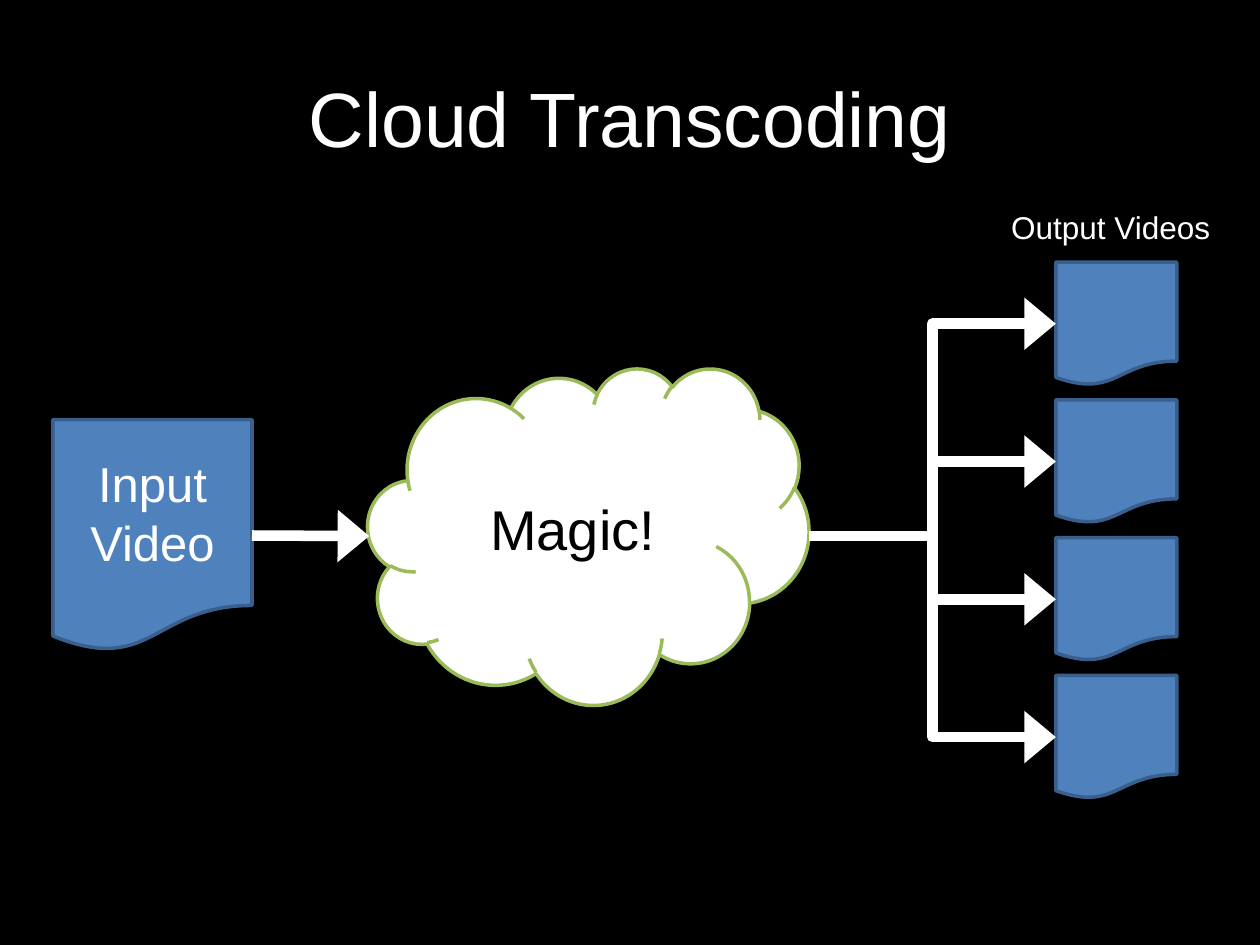
from lxml import etree
from pptx import Presentation
from pptx.dml.color import RGBColor
from pptx.enum.shapes import MSO_CONNECTOR as Link, MSO_SHAPE as Shape
from pptx.enum.text import MSO_ANCHOR as Anchor, PP_ALIGN as Align
from pptx.oxml.ns import qn
from pptx.util import Inches, Pt

BLACK = RGBColor(0x00, 0x00, 0x00)
WHITE = RGBColor(0xFF, 0xFF, 0xFF)
BLUE = RGBColor(0x4F, 0x81, 0xBD)
NAVY = RGBColor(0x3A, 0x5F, 0x8C)
GREEN = RGBColor(0x9B, 0xBB, 0x59)
FONT = "Arial"
OUTPUT_COUNT = 4
OUTPUT_HEIGHT = Inches(0.98)


def write_text(shape, lines, size, color, anchor=Anchor.MIDDLE):
    frame = shape.text_frame
    frame.word_wrap = True
    frame.vertical_anchor = anchor
    for index, line in enumerate(lines):
        para = frame.paragraphs[0] if index == 0 else frame.add_paragraph()
        para.alignment = Align.CENTER
        span = para.add_run()
        span.text = line
        span.font.name = FONT
        span.font.size = Pt(size)
        span.font.color.rgb = color


def add_label(page, box, text, size, anchor):
    label = page.shapes.add_textbox(*box)
    write_text(label, [text], size, WHITE, anchor)


def add_outlined(page, kind, box, fill, line):
    shape = page.shapes.add_shape(kind, *box)
    shape.shadow.inherit = False
    shape.fill.solid()
    shape.fill.fore_color.rgb = fill
    shape.line.color.rgb = line
    shape.line.width = Pt(2)
    return shape


def add_document(page, box):
    return add_outlined(page, Shape.FLOWCHART_DOCUMENT, box, BLUE, NAVY)


def add_arrow(page, kind, start, end):
    arrow = page.shapes.add_connector(kind, *start, *end)
    arrow.line.color.rgb = WHITE
    arrow.line.width = Pt(6)
    outline = arrow.line._get_or_add_ln()
    etree.SubElement(outline, qn("a:tailEnd"), type="triangle", w="lg", len="med")
    etree.SubElement(arrow._element.spPr, qn("a:effectLst"))
    return arrow


def add_input(page, box):
    document = add_document(page, box)
    write_text(document, ["Input", "Video"], 28, WHITE)
    return document


def add_cloud(page, box):
    cloud = add_outlined(page, Shape.CLOUD, box, WHITE, GREEN)
    write_text(cloud, ["Magic!"], 32, BLACK)
    return cloud


def add_outputs(page, box):
    left, top, width, height = box
    pitch = (height - OUTPUT_HEIGHT) // (OUTPUT_COUNT - 1)
    return [
        add_document(page, (left, top + row * pitch, width, OUTPUT_HEIGHT))
        for row in range(OUTPUT_COUNT)
    ]


def add_flow(page, source, cloud, outputs):
    middle = cloud.top + cloud.height // 2
    entry = add_arrow(
        page,
        Link.STRAIGHT,
        (source.left + source.width, middle),
        (cloud.left + Inches(0.01), middle),
    )
    entry.begin_connect(source, 3)
    for output in outputs:
        add_arrow(
            page,
            Link.ELBOW,
            (cloud.left + cloud.width, middle),
            (output.left, output.top + output.height // 2),
        )


def inches(*lengths):
    return tuple(Inches(length) for length in lengths)


def main():
    deck = Presentation()
    deck.slide_width, deck.slide_height = inches(10, 7.5)
    page = deck.slides.add_slide(deck.slide_layouts[6])
    page.background.fill.solid()
    page.background.fill.fore_color.rgb = BLACK

    add_label(page, inches(0.5, 0.3, 9, 1.25), "Cloud Transcoding", 44, Anchor.MIDDLE)
    source = add_input(page, inches(0.42, 3.33, 1.58, 1.84))
    cloud = add_cloud(page, inches(2.92, 2.92, 3.5, 2.67))
    outputs = add_outputs(page, inches(8.38, 2.08, 0.96, 4.26))
    add_flow(page, source, cloud, outputs)
    add_label(page, inches(7.9, 1.6, 1.83, 0.4), "Output Videos", 18, Anchor.TOP)
    deck.save("out.pptx")


if __name__ == "__main__":
    main()
